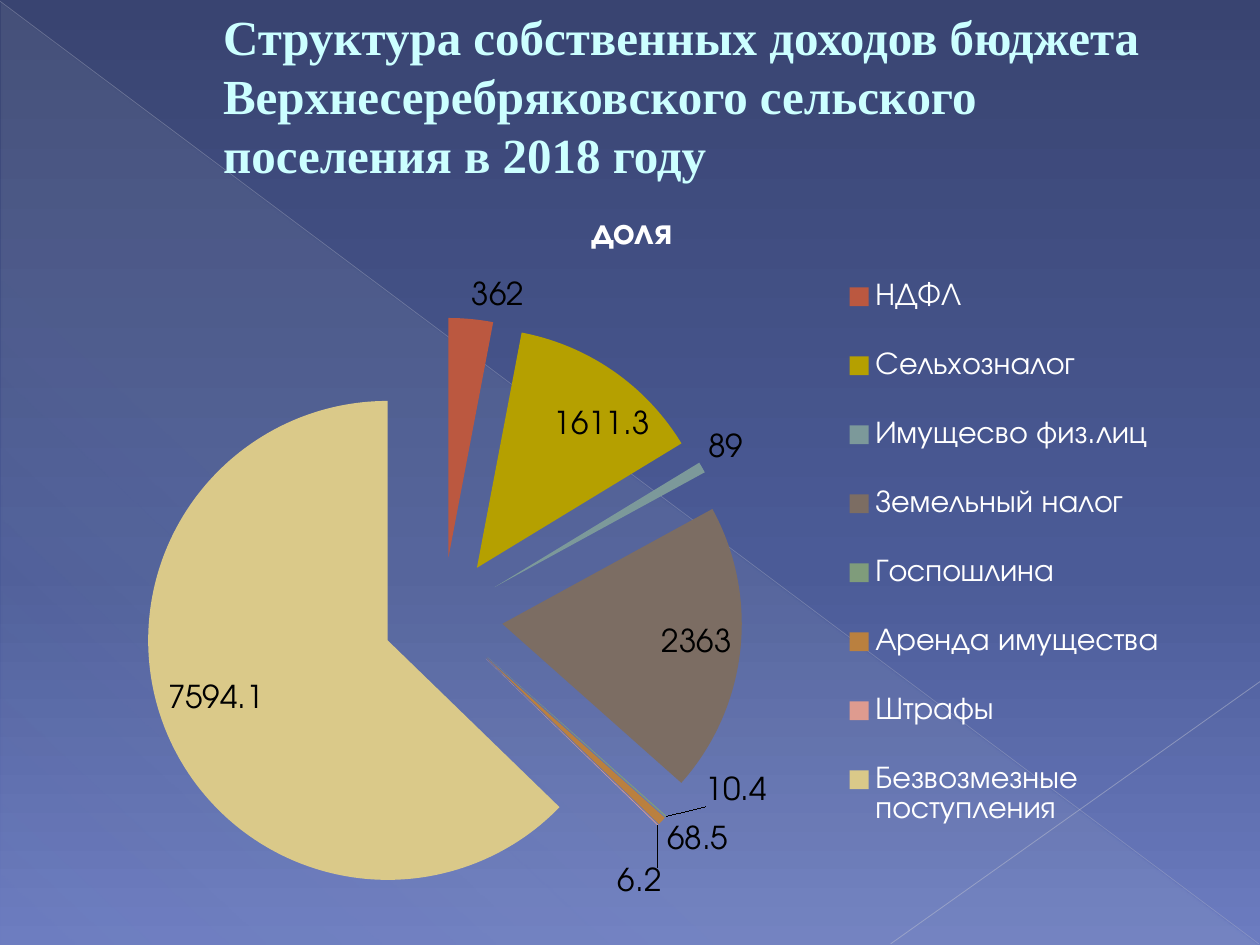
import pptx
import pptx.util
import pptx.dml.color
import pptx.chart.data
import pptx.enum.chart
import pptx.enum.shapes
import pptx.enum.text
import pptx.oxml
import pptx.oxml.ns
import lxml.etree

Pt = pptx.util.Pt
qn = pptx.oxml.ns.qn
FACE = "TeX Gyre Adventor"
SPOT = pptx.enum.chart.XL_LABEL_POSITION

# name, value, slice colour
INCOME = [
    ("НДФЛ", 362, "BB5840"),
    ("Сельхозналог", 1611.3, "B5A000"),
    ("Имущесво физ.лиц", 89, "7C999A"),
    ("Земельный налог", 2363, "7C6D63"),
    ("Госпошлина", 10.4, "7F9C7B"),
    ("Аренда имущества", 68.5, "BA803F"),
    ("Штрафы", 6.2, "DE9B8F"),
    ("Безвозмезные поступления", 7594.1, "DAC989"),
]
# Label position and offset, by slice, as shares of the chart
SHIFTS = {
    4: (SPOT.BEST_FIT, 0.03, -0.06),
    5: (SPOT.OUTSIDE_END, 0, 0),
    6: (SPOT.BEST_FIT, -0.04, 0.05),
}


def color(text):
    return pptx.dml.color.RGBColor.from_string(text)


def style(font, size, tint, face=FACE, bold=False):
    font.size, font.name, font.bold = Pt(size), face, bold
    font.color.rgb = color(tint)


def fade(node, share):
    """Set the opacity, in percent, of a colour node."""
    lxml.etree.SubElement(node, qn("a:alpha")).set("val", str(share * 1000))


def blend(old, stops, angle):
    """Replace a fill node by a gradient of (place, colour, opacity) stops."""
    grad = pptx.oxml.parse_xml(
        f'<a:gradFill {pptx.oxml.ns.nsdecls("a")} rotWithShape="1"><a:gsLst/>'
        f'<a:lin ang="{angle * 60000}" scaled="0"/></a:gradFill>')
    for place, tint, share in stops:
        stop = lxml.etree.SubElement(grad[0], qn("a:gs"), pos=str(place * 1000))
        node = lxml.etree.SubElement(stop, qn("a:srgbClr"), val=tint)
        if share < 100:
            fade(node, share)
    old.getparent().replace(old, grad)


def add_back(slide):
    slide.background.fill.solid()
    blend(slide.element.xpath(".//p:bgPr/a:solidFill")[0],
          [(0, "394471", 100), (60, "4B5B97", 100), (100, "6C7CC0", 100)], 90)


def add_wedge(slide):
    wedge = slide.shapes.add_shape(
        pptx.enum.shapes.MSO_SHAPE.RIGHT_TRIANGLE, Pt(0.7), Pt(1.4), Pt(718.6), Pt(538.6))
    wedge.shadow.inherit = False
    wedge.line.fill.background()
    wedge.fill.solid()
    wedge.fill.fore_color.rgb = color("C5D1D7")
    blend(wedge.element.spPr.find(qn("a:solidFill")),
          [(0, "C5D1D7", 10), (70, "C5D1D7", 8), (100, "C5D1D7", 1)], 133)


def add_line(slide, ends, tint, width, share):
    line = slide.shapes.add_connector(
        pptx.enum.shapes.MSO_CONNECTOR.STRAIGHT, *map(Pt, ends))
    line.line.color.rgb = color(tint)
    line.line.width = Pt(width)
    props = line.element.spPr
    fade(props.xpath(".//a:srgbClr")[0], share)
    lxml.etree.SubElement(props, qn("a:effectLst"))


def add_title(slide, text):
    title = slide.shapes.title
    title.left, title.top, title.width, title.height = map(Pt, (82, 9.4, 590.4, 90))
    slide.shapes.element.append(title.element)
    frame = title.text_frame
    frame.text = text
    frame.word_wrap = True
    frame.auto_size = pptx.enum.text.MSO_AUTO_SIZE.NONE
    frame.margin_left = Pt(45.5)
    frame.vertical_anchor = pptx.enum.text.MSO_ANCHOR.MIDDLE
    para = frame.paragraphs[0]
    para.alignment = pptx.enum.text.PP_ALIGN.LEFT
    para.line_spacing = 1.0
    style(para.font, 28, "CCFFFF", "Times New Roman", True)


def layout(**parts):
    """Make a manual chart layout from its parts, such as x and w."""
    node = pptx.oxml.parse_xml(
        f'<c:layout {pptx.oxml.ns.nsdecls("c")}><c:manualLayout/></c:layout>')
    for name, val in parts.items():
        lxml.etree.SubElement(node[0], qn("c:" + name), val=str(val))
    return node


def place(owner, before, **parts):
    """Give a chart part a layout that follows its child named before."""
    for old in owner.findall(qn("c:layout")):
        owner.remove(old)
    node = layout(**parts)
    if before:
        owner.find(qn(before)).addnext(node)
    else:
        owner.insert(0, node)


def add_labels(series):
    labels = series.data_labels
    labels.show_value = True
    labels.position = SPOT.BEST_FIT
    style(labels.font, 18, "000000")
    for spot, (side, x, y) in SHIFTS.items():
        label = series.points[spot].data_label
        style(label.font, 18, "000000")
        label.position = side
        if x or y:
            node = series._element.xpath(f"c:dLbls/c:dLbl[c:idx/@val='{spot}']")[0]
            place(node, "c:idx", x=x, y=y)


def add_pie(slide):
    data = pptx.chart.data.CategoryChartData()
    data.categories = [name for name, _, _ in INCOME]
    data.add_series("доля", [val for _, val, _ in INCOME])
    chart = slide.shapes.add_chart(
        pptx.enum.chart.XL_CHART_TYPE.PIE, Pt(36), Pt(104.6), Pt(648), Pt(427.7), data).chart
    style(chart.font, 18, "FFFFFF")
    chart.plots[0].vary_by_categories = True

    series = chart.plots[0].series[0]
    burst = lxml.etree.Element(qn("c:explosion"), val="25")
    series._element.find(qn("c:tx")).addnext(burst)
    for spot, (_, _, tint) in enumerate(INCOME):
        look = series.points[spot].format
        look.fill.solid()
        look.fill.fore_color.rgb = color(tint)
        look.line.fill.background()
    add_labels(series)

    chart.has_title = True
    head = chart.chart_title
    head.include_in_layout = False
    head.text_frame.text = "доля"
    style(head.text_frame.paragraphs[0].font, 21, "FFFFFF", bold=True)
    place(head._element, "c:tx", xMode="edge", yMode="edge", x=0.46, y=0.03)

    chart.has_legend = True
    key = chart.legend
    key.position = pptx.enum.chart.XL_LEGEND_POSITION.RIGHT
    key.include_in_layout = False
    style(key.font, 18, "FFFFFF")
    place(key._element, "c:legendPos", xMode="edge", yMode="edge",
          x=0.68, y=0.08, w=0.3, h=0.83)
    place(chart._chartSpace.xpath(".//c:plotArea")[0], None, layoutTarget="inner",
          xMode="edge", yMode="edge", x=0.07, y=0.18, w=0.53, h=0.8)


def main():
    deck = pptx.Presentation()
    deck.slide_width, deck.slide_height = Pt(720), Pt(540)
    slide = deck.slides.add_slide(deck.slide_layouts.get_by_name("Title Only"))
    add_back(slide)
    add_wedge(slide)
    add_line(slide, (0, 0.7, 719.3, 539.3), "BABECD", 0.39, 35)
    add_line(slide, (720, 389.5, 509, 539.3), "C2C5D2", 0.47, 45)
    add_title(slide, "Структура собственных доходов бюджета "
                     "Верхнесеребряковского сельского поселения в 2018 году")
    add_pie(slide)
    deck.save("out.pptx")


if __name__ == "__main__":
    main()
